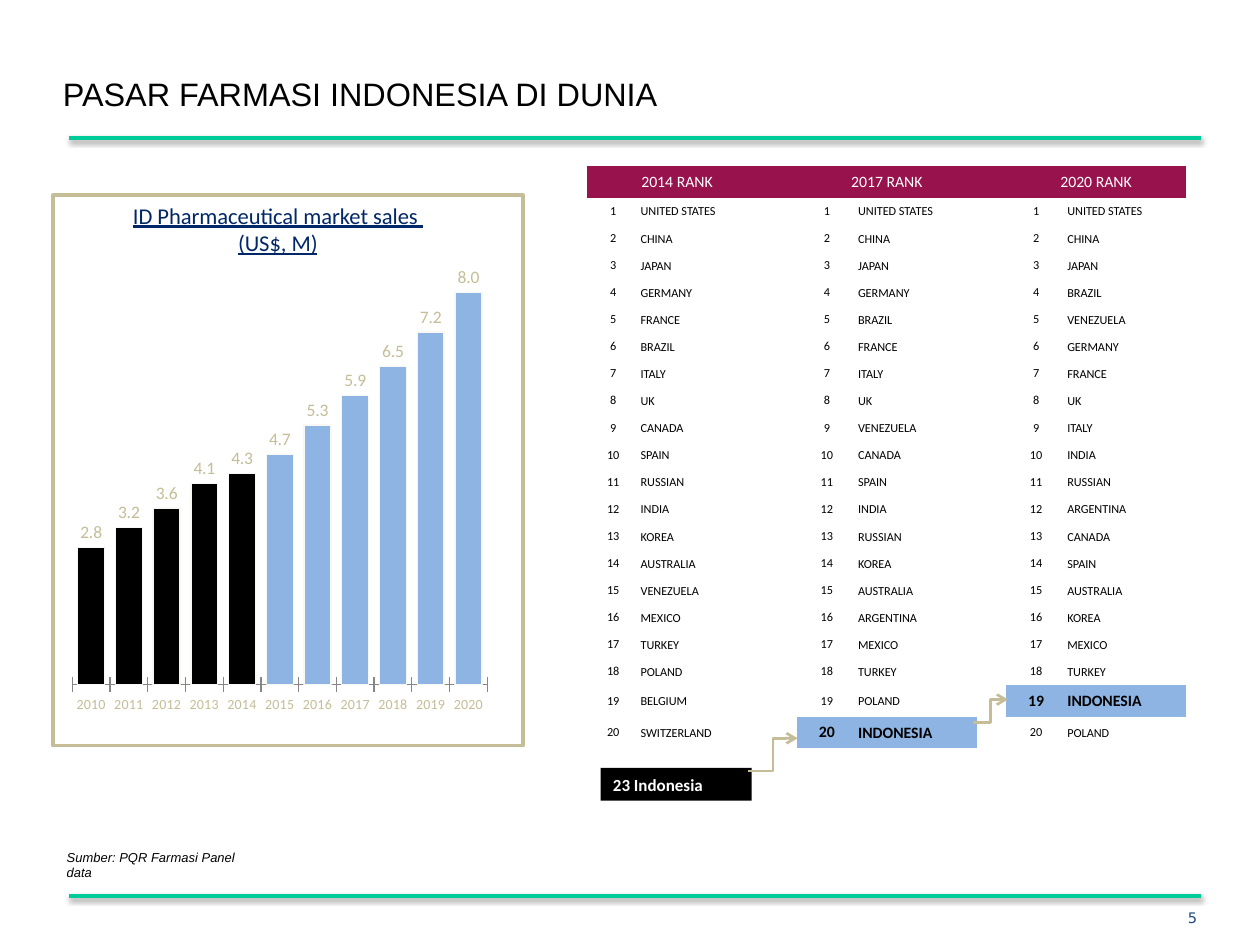
from dataclasses import dataclass

from lxml.etree import SubElement
from pptx import Presentation
from pptx.chart.data import CategoryChartData
from pptx.dml.color import RGBColor as RGB
from pptx.enum.chart import XL_CHART_TYPE, XL_LABEL_POSITION, XL_TICK_MARK
from pptx.enum.shapes import MSO_CONNECTOR as CONNECTOR, MSO_SHAPE as SHAPE
from pptx.enum.text import MSO_ANCHOR as ANCHOR, PP_ALIGN as ALIGN
from pptx.oxml import parse_xml
from pptx.oxml.ns import nsdecls, qn
from pptx.util import Pt


@dataclass(frozen=True)
class Theme:
    black: RGB = RGB.from_string("000000")
    white: RGB = RGB.from_string("FFFFFF")
    green: RGB = RGB.from_string("00CC99")
    tan: RGB = RGB.from_string("C4BD97")
    blue: RGB = RGB.from_string("8EB4E3")
    navy: RGB = RGB.from_string("002868")
    number_blue: RGB = RGB.from_string("1F497D")
    wine: RGB = RGB.from_string("98134E")
    bar_edge: RGB = RGB.from_string("F8F7F3")
    axis: RGB = RGB.from_string("868686")
    sans: str = "Arial"
    body: str = "Calibri"
    number: str = "DejaVu Sans"
    title: float = 18.5
    chart_title: float = 12.9
    label: float = 10
    callout: float = 9.7
    strong: float = 9
    page: float = 8.3
    axis_text: float = 8
    source: float = 7.4
    cell: float = 7


T = Theme()

SALES = {2010: 2.8, 2011: 3.2, 2012: 3.6, 2013: 4.1, 2014: 4.3, 2015: 4.7,
         2016: 5.3, 2017: 5.9, 2018: 6.5, 2019: 7.2, 2020: 8.0}
LAST_ACTUAL_YEAR = 2014

RANKS = {
    "2014 RANK": [
        "UNITED STATES", "CHINA", "JAPAN", "GERMANY", "FRANCE", "BRAZIL", "ITALY",
        "UK", "CANADA", "SPAIN", "RUSSIAN", "INDIA", "KOREA", "AUSTRALIA",
        "VENEZUELA", "MEXICO", "TURKEY", "POLAND", "BELGIUM", "SWITZERLAND"],
    "2017 RANK": [
        "UNITED STATES", "CHINA", "JAPAN", "GERMANY", "BRAZIL", "FRANCE", "ITALY",
        "UK", "VENEZUELA", "CANADA", "SPAIN", "INDIA", "RUSSIAN", "KOREA",
        "AUSTRALIA", "ARGENTINA", "MEXICO", "TURKEY", "POLAND", "INDONESIA"],
    "2020 RANK": [
        "UNITED STATES", "CHINA", "JAPAN", "BRAZIL", "VENEZUELA", "GERMANY", "FRANCE",
        "UK", "ITALY", "INDIA", "RUSSIAN", "ARGENTINA", "CANADA", "SPAIN",
        "AUSTRALIA", "KOREA", "MEXICO", "TURKEY", "INDONESIA", "POLAND"],
}
COLUMN_WIDTHS = [30, 73, 17, 34.3, 68.5, 16.8, 34.3, 68.5]
ROW_HEIGHTS = [18] + [15.5] * 18 + [18] * 2
NO_GRID_STYLE = "{2D5ABB26-0587-4C30-8999-92F81FD0307C}"


def points(*lengths):
    return [Pt(length) for length in lengths]


def set_font(font, size, color, name=T.body, **emphasis):
    font.size, font.name, font.color.rgb = Pt(size), name, color
    for trait, value in emphasis.items():
        setattr(font, trait, value)


def write(frame, lines, size, color, name=T.body, align=ALIGN.LEFT,
          anchor=ANCHOR.TOP, insets=(0, 0, 0, 0), wrap=True, **emphasis):
    frame.word_wrap = wrap
    frame.vertical_anchor = anchor
    (frame.margin_left, frame.margin_top,
     frame.margin_right, frame.margin_bottom) = points(*insets)
    frame.text = lines
    for paragraph in frame.paragraphs:
        paragraph.alignment = align
        set_font(paragraph.font, size, color, name, **emphasis)


def add_text(slide, box, lines, size, color, **style):
    write(slide.shapes.add_textbox(*points(*box)).text_frame, lines, size, color, **style)


def add_box(slide, box, fill=None, line=None):
    rect = slide.shapes.add_shape(SHAPE.RECTANGLE, *points(*box))
    rect.shadow.inherit = False
    if fill is None:
        rect.fill.background()
    else:
        rect.fill.solid()
        rect.fill.fore_color.rgb = fill
    if line is None:
        rect.line.fill.background()
    else:
        rect.line.color.rgb, rect.line.width = line, Pt(2)
    return rect


def add_line(slide, kind, ends, color, width):
    line = slide.shapes.add_connector(kind, *points(*ends))
    line.line.color.rgb, line.line.width = color, Pt(width)
    effects = SubElement(line._element.spPr, qn("a:effectLst"))
    return line, effects


def add_rule(slide, y):
    """Green line across the slide with a soft shadow below it."""
    _, effects = add_line(slide, CONNECTOR.STRAIGHT, (39.6, y, 686.2, y), T.green, 2)
    effects.append(parse_xml(
        f'<a:outerShdw {nsdecls("a")} blurRad="{Pt(3.1)}" dist="{Pt(1.6)}" dir="5400000" '
        'rotWithShape="0"><a:srgbClr val="000000"><a:alpha val="38000"/></a:srgbClr>'
        '</a:outerShdw>'))


def add_step_arrow(slide, ends):
    arrow, _ = add_line(slide, CONNECTOR.ELBOW, ends, T.tan, 1.5)
    SubElement(arrow.line._get_or_add_ln(), qn("a:tailEnd"), type="arrow")


def add_sales_chart(slide, box):
    sales = CategoryChartData(number_format="0.0")
    sales.categories = [str(year) for year in SALES]
    sales.add_series("Series 1", SALES.values())
    chart = slide.shapes.add_chart(
        XL_CHART_TYPE.COLUMN_CLUSTERED, *points(*box), sales).chart
    chart.has_legend = chart.has_title = False
    set_font(chart.font, T.label, T.black)

    chart.value_axis.minimum_scale, chart.value_axis.maximum_scale = 0, 9
    chart.value_axis.has_major_gridlines = False
    chart.value_axis.visible = False
    years = chart.category_axis
    years.major_tick_mark = XL_TICK_MARK.CROSS
    years.format.line.color.rgb = T.axis
    set_font(years.tick_labels.font, T.axis_text, T.tan)

    plot = chart.plots[0]
    plot.gap_width, plot.vary_by_categories = 40, False
    bars = plot.series[0]
    bars.format.line.color.rgb, bars.format.line.width = T.bar_edge, Pt(0.75)
    for index, year in enumerate(SALES):
        bar = bars.points[index].format
        bar.fill.solid()
        bar.fill.fore_color.rgb = T.black if year <= LAST_ACTUAL_YEAR else T.blue
        bar.line.color.rgb, bar.line.width = T.bar_edge, Pt(0.75)
    labels = bars.data_labels
    labels.show_value, labels.position = True, XL_LABEL_POSITION.OUTSIDE_END
    labels.number_format, labels.number_format_is_linked = "0.0", False
    set_font(labels.font, T.label, T.tan)

    area = chart._chartSpace.chart.plotArea
    for old in area.findall(qn("c:layout")):
        area.remove(old)
    area.insert(0, parse_xml(
        f'<c:layout {nsdecls("c")}><c:manualLayout><c:layoutTarget val="inner"/>'
        '<c:xMode val="edge"/><c:yMode val="edge"/><c:x val="0.04"/><c:y val="0.073"/>'
        '<c:w val="0.92"/><c:h val="0.859"/></c:manualLayout></c:layout>'))


def fill_cell(cell, text, size, color, fill=None, align=ALIGN.CENTER,
              insets=(6.5, 3, 6.5, 3), bold=False):
    write(cell.text_frame, text, size, color, align=align, bold=bold)
    cell.vertical_anchor = ANCHOR.MIDDLE
    (cell.margin_left, cell.margin_top,
     cell.margin_right, cell.margin_bottom) = points(*insets)
    if fill is None:
        cell.fill.background()
    else:
        cell.fill.solid()
        cell.fill.fore_color.rgb = fill


def add_rank_table(slide, left, top):
    frame = slide.shapes.add_table(
        len(ROW_HEIGHTS), len(COLUMN_WIDTHS),
        *points(left, top, sum(COLUMN_WIDTHS), sum(ROW_HEIGHTS)))
    table = frame.table
    table.first_row = table.horz_banding = False
    table._tbl.tblPr.find(qn("a:tableStyleId")).text = NO_GRID_STYLE
    for column, width in zip(table.columns, COLUMN_WIDTHS):
        column.width = Pt(width)
    for index, (row, height) in enumerate(zip(table.rows, ROW_HEIGHTS)):
        row.height = Pt(height)
        for cell in row.cells:
            fill_cell(cell, "", T.cell, T.black, fill=None if index else T.wine)

    for group, (heading, countries) in enumerate(RANKS.items()):
        rank_column = group * 3
        header = table.cell(0, rank_column)
        header.merge(table.cell(0, rank_column + 1))
        fill_cell(header, heading, T.strong, T.white, T.wine)
        for rank, country in enumerate(countries, 1):
            home = country == "INDONESIA"
            look = dict(size=T.strong if home else T.cell, color=T.black,
                        fill=T.blue if home else None, bold=home)
            fill_cell(table.cell(rank, rank_column), str(rank), **look)
            fill_cell(table.cell(rank, rank_column + 1), country, align=ALIGN.LEFT,
                      insets=(0.7, 0.7, 0.7, 0), **look)


def main():
    deck = Presentation()
    deck.slide_width, deck.slide_height = points(720, 540)
    slide = deck.slides.add_slide(deck.slide_layouts[6])

    add_text(slide, (36, 0, 648, 64.8), "PASAR FARMASI INDONESIA DI DUNIA",
             T.title, T.black, name=T.sans, anchor=ANCHOR.BOTTOM)
    add_sales_chart(slide, (31, 118, 257.8, 293))
    add_text(slide, (38.9, 112.3, 239.8, 53.3),
             "ID Pharmaceutical market sales \n(US$, M)", T.chart_title, T.navy,
             align=ALIGN.CENTER, insets=(6.5, 3, 6.5, 3), underline=True)
    add_rank_table(slide, 335.4, 95)
    add_box(slide, (30.2, 111.6, 268.6, 314.6), line=T.tan)
    add_step_arrow(slide, (555.8, 413, 576, 399.8))
    callout = add_box(slide, (343.2, 438.8, 86.4, 18.7), fill=T.black)
    write(callout.text_frame, "23 Indonesia", T.callout, T.white, anchor=ANCHOR.MIDDLE,
          insets=(7.2, 3.6, 7.2, 3.6), wrap=False, bold=True)
    add_text(slide, (31, 481.7, 117.4, 16.6), "Sumber: PQR Farmasi Panel data",
             T.source, T.black, name=T.sans, insets=(7.2, 3.6, 3, 3.6), wrap=False,
             italic=True)
    add_rule(slide, 78.8)
    add_step_arrow(slide, (427.7, 440.6, 455.8, 421.9))
    add_text(slide, (516.2, 500.4, 167.8, 28.8), "5", T.page, T.number_blue,
             name=T.number, align=ALIGN.RIGHT, anchor=ANCHOR.BOTTOM)
    add_rule(slide, 511.9)
    deck.save("out.pptx")


if __name__ == "__main__":
    main()
